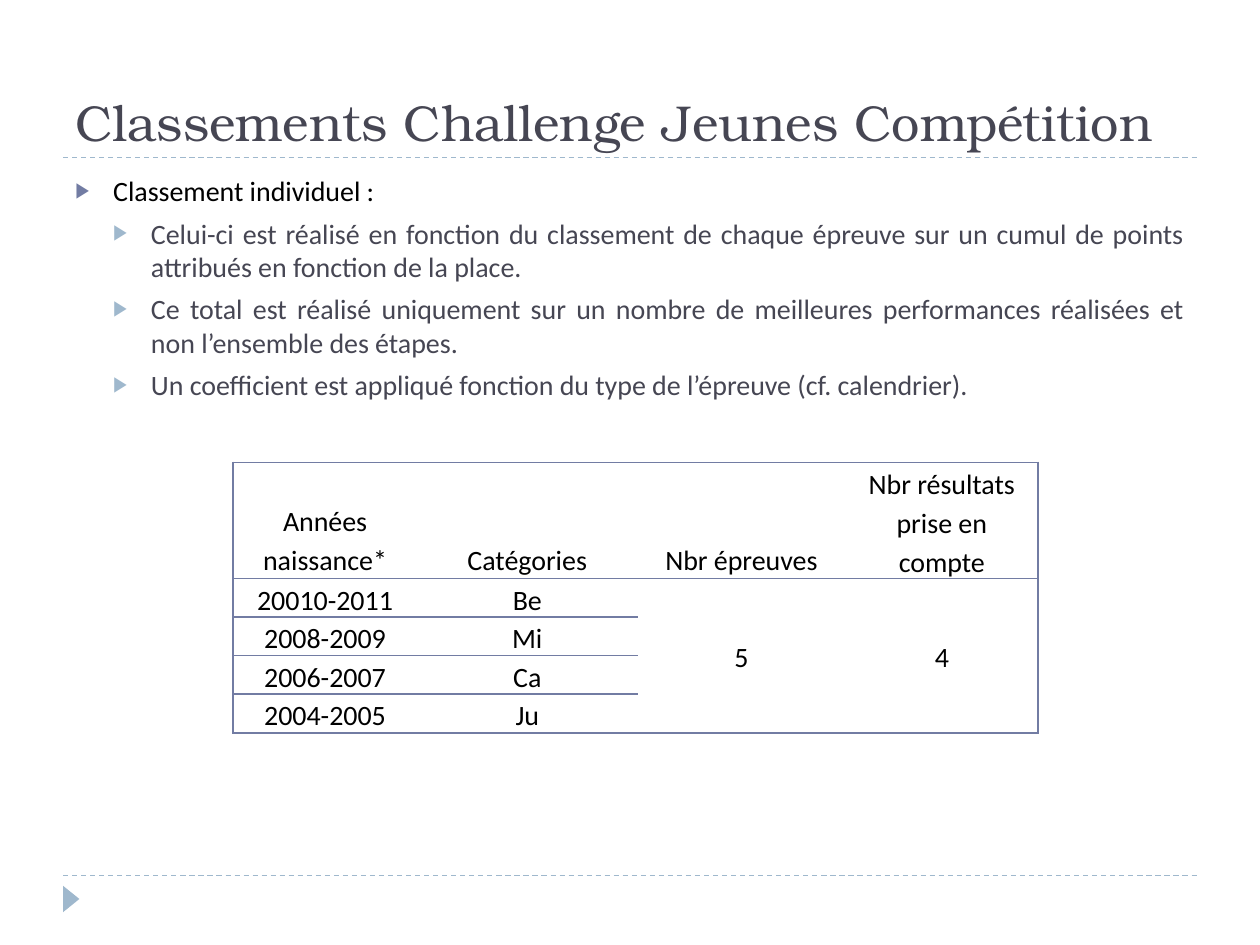
from lxml import etree
from pptx import Presentation
from pptx.dml.color import RGBColor
from pptx.enum.dml import MSO_LINE
from pptx.enum.shapes import MSO_CONNECTOR, MSO_SHAPE
from pptx.enum.text import MSO_ANCHOR, PP_ALIGN
from pptx.oxml.ns import qn
from pptx.util import Inches, Pt

STRAIGHT = MSO_CONNECTOR.STRAIGHT
TRIANGLE = MSO_SHAPE.ISOSCELES_TRIANGLE
DASH = MSO_LINE.DASH
TOP, MIDDLE, BOTTOM = MSO_ANCHOR.TOP, MSO_ANCHOR.MIDDLE, MSO_ANCHOR.BOTTOM
CENTER, JUSTIFY, LEFT = PP_ALIGN.CENTER, PP_ALIGN.JUSTIFY, PP_ALIGN.LEFT

BLACK = RGBColor(0x00, 0x00, 0x00)
WHITE = RGBColor(0xFF, 0xFF, 0xFF)
SLATE = RGBColor(0x46, 0x46, 0x53)
INDIGO = RGBColor(0x72, 0x7C, 0xA3)
SKY = RGBColor(0x9F, 0xB8, 0xCD)

TITLE_FONT = {"name": "TeX Gyre Bonum", "size": Pt(28.8)}
BODY_FONT = {"name": "Calibri", "size": Pt(16)}

BODY = [
    (0, "Classement individuel :"),
    (1, "Celui-ci est réalisé en fonction du classement de chaque épreuve "
        "sur un cumul de points attribués en fonction de la place."),
    (1, "Ce total est réalisé uniquement sur un nombre de meilleures "
        "performances réalisées et non l’ensemble des étapes."),
    (1, "Un coefficient est appliqué fonction du type de l’épreuve (cf. calendrier)."),
]
LEVELS = [
    {"color": BLACK, "bullet": INDIGO, "space": Pt(6)},
    {"color": SLATE, "bullet": SKY, "space": Pt(5)},
]
INDENT = Inches(0.3)

ROWS = [
    ["Années naissance*", "Catégories", "Nbr épreuves", "Nbr résultats prise en compte"],
    ["20010-2011", "Be", "5", "4"],
    ["2008-2009", "Mi"],
    ["2006-2007", "Ca"],
    ["2004-2005", "Ju"],
]
COLUMN_WIDTHS = [1.46, 1.75, 1.65, 1.53]
ROW_HEIGHTS = [0.83] + [0.21] * 4
MERGED_COLUMNS = (2, 3)


def set_attributes(target, values):
    for name, value in values.items():
        setattr(target, name, value)


def write(paragraph, text, font, color, alignment):
    paragraph.alignment = alignment
    run = paragraph.add_run()
    run.text = text
    set_attributes(run.font, font)
    run.font.color.rgb = color


def add_text_frame(slide, top, height, anchor):
    box = slide.shapes.add_textbox(Inches(0.5), Inches(top), Inches(9), Inches(height))
    set_attributes(box.text_frame, {"word_wrap": True, "vertical_anchor": anchor})
    return box.text_frame


def add_bullet(paragraph, level, color):
    properties = paragraph._p.get_or_add_pPr()
    properties.set("marL", str(INDENT * (level + 1)))
    properties.set("indent", str(-INDENT))
    bullet_color = etree.SubElement(properties, qn("a:buClr"))
    etree.SubElement(bullet_color, qn("a:srgbClr"), val=str(color))
    etree.SubElement(properties, qn("a:buSzPct"), val="76000")
    etree.SubElement(properties, qn("a:buFont"), typeface="Arial")
    etree.SubElement(properties, qn("a:buChar"), char="▶")


def add_body(slide):
    frame = add_text_frame(slide, 1.33, 5.4, TOP)
    for index, (level, text) in enumerate(BODY):
        paragraph = frame.add_paragraph() if index else frame.paragraphs[0]
        style = LEVELS[level]
        set_attributes(paragraph, {"level": level, "space_before": style["space"]})
        add_bullet(paragraph, level, style["bullet"])
        write(paragraph, text, BODY_FONT, style["color"], JUSTIFY)


def add_rule(slide, y):
    rule = slide.shapes.add_connector(STRAIGHT, Inches(0.5), Inches(y), Inches(9.5), Inches(y))
    set_attributes(rule.line, {"width": Pt(0.75), "dash_style": DASH})
    rule.line.color.rgb = SKY
    etree.SubElement(rule._element.spPr, qn("a:effectLst"))


def add_marker(slide):
    marker = slide.shapes.add_shape(
        TRIANGLE, Inches(0.46), Inches(7.07), Inches(0.21), Inches(0.13))
    marker.rotation = 90
    marker.shadow.inherit = False
    marker.fill.solid()
    marker.fill.fore_color.rgb = SKY
    marker.line.fill.background()


def add_border(cell, side, visible):
    properties = cell._tc.get_or_add_tcPr()
    line = etree.SubElement(properties, qn("a:ln" + side), w=str(Pt(1)))
    if visible:
        fill = etree.SubElement(line, qn("a:solidFill"))
        etree.SubElement(fill, qn("a:srgbClr"), val=str(INDIGO))
    else:
        etree.SubElement(line, qn("a:noFill"))


def add_borders(cell, row, column):
    def horizontal(edge):
        return column not in MERGED_COLUMNS or edge in (0, 1, len(ROWS))

    bottom = row + (cell.span_height if cell.is_merge_origin else 1)
    add_border(cell, "L", column == 0)
    add_border(cell, "R", column == len(COLUMN_WIDTHS) - 1)
    add_border(cell, "T", horizontal(row))
    add_border(cell, "B", horizontal(bottom))


def format_cell(cell, row, column):
    add_borders(cell, row, column)
    cell.fill.solid()
    cell.fill.fore_color.rgb = WHITE
    set_attributes(cell, {
        "margin_left": Inches(0.05), "margin_right": Inches(0.05),
        "margin_top": 0, "margin_bottom": 0,
        "vertical_anchor": MIDDLE if cell.is_merge_origin else BOTTOM,
    })
    if column < len(ROWS[row]):
        paragraph = cell.text_frame.paragraphs[0]
        paragraph.line_spacing = 1.15
        write(paragraph, ROWS[row][column], BODY_FONT, BLACK, CENTER)


def add_results_table(slide):
    table = slide.shapes.add_table(
        len(ROWS), len(COLUMN_WIDTHS), Inches(1.85), Inches(3.67),
        Inches(sum(COLUMN_WIDTHS)), Inches(sum(ROW_HEIGHTS))).table
    set_attributes(table, {"first_row": False, "horz_banding": False})
    for column, width in zip(table.columns, COLUMN_WIDTHS):
        column.width = Inches(width)
    for row, height in zip(table.rows, ROW_HEIGHTS):
        row.height = Inches(height)
    for column in MERGED_COLUMNS:
        table.cell(1, column).merge(table.cell(len(ROWS) - 1, column))
    for row in range(len(ROWS)):
        for column in range(len(COLUMN_WIDTHS)):
            format_cell(table.cell(row, column), row, column)


def main():
    presentation = Presentation()
    set_attributes(presentation, {"slide_width": Inches(10), "slide_height": Inches(7.5)})
    slide = presentation.slides.add_slide(presentation.slide_layouts[6])
    for y in (6.95, 1.25):
        add_rule(slide, y)
    add_marker(slide)
    title = add_text_frame(slide, 0.17, 1.08, BOTTOM)
    write(title.paragraphs[0], "Classements Challenge Jeunes Compétition", TITLE_FONT, SLATE, LEFT)
    add_body(slide)
    add_results_table(slide)
    presentation.save("out.pptx")


if __name__ == "__main__":
    main()
